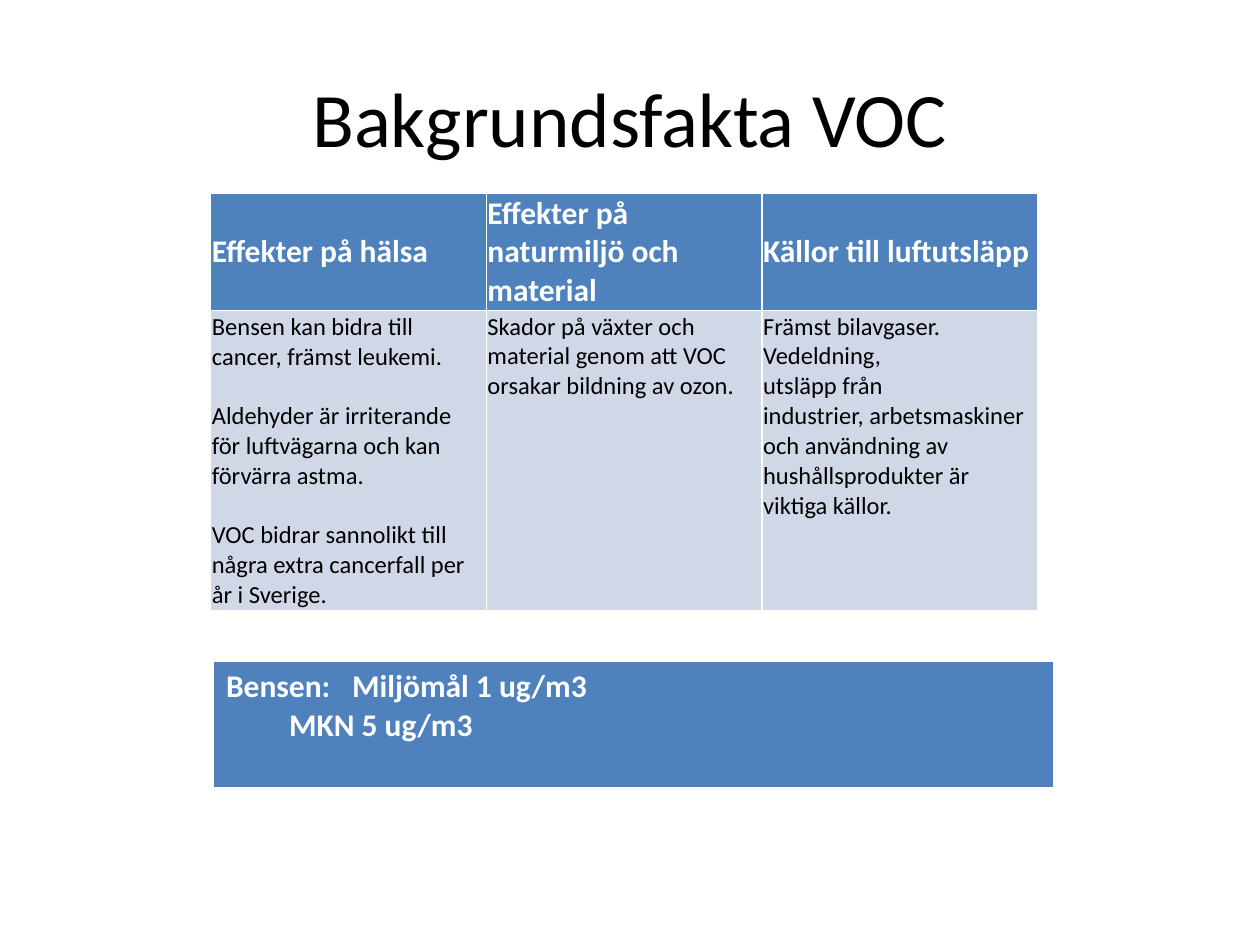
from pptx import Presentation
from pptx.dml.color import RGBColor
from pptx.enum.text import MSO_ANCHOR, PP_ALIGN
from pptx.util import Pt

BLUE = RGBColor(0x4F, 0x81, 0xBD)
PALE = RGBColor(0xD0, 0xD8, 0xE8)
WHITE = RGBColor(0xFF, 0xFF, 0xFF)
BLACK = RGBColor(0, 0, 0)


def style_runs(tf, size, color, bold=False):
    for p in tf.paragraphs:
        for r in p.runs:
            r.font.name = "Calibri"
            r.font.size = Pt(size)
            r.font.bold = bold
            r.font.color.rgb = color


def fill_cell(cell, paragraphs, size, color, bold, fill, gap=0):
    cell.fill.solid()
    cell.fill.fore_color.rgb = fill
    tf = cell.text_frame
    for i, text in enumerate(paragraphs):
        p = tf.add_paragraph() if i else tf.paragraphs[0]
        p.text = text
        if i:
            p.space_before = Pt(gap)
    style_runs(tf, size, color, bold)


prs = Presentation()
prs.slide_width, prs.slide_height = Pt(720), Pt(540)
s = prs.slides.add_slide(prs.slide_layouts[5])

# Title
title = s.shapes.title
title.left, title.top, title.width, title.height = Pt(36), Pt(21.6), Pt(648), Pt(90)
tf = title.text_frame
tf.text = "Bakgrundsfakta VOC"
tf.vertical_anchor = MSO_ANCHOR.MIDDLE
tf.paragraphs[0].alignment = PP_ALIGN.CENTER
style_runs(tf, 44, BLACK)

# Effects and sources: header and body of each column
columns = [
    ("Effekter på hälsa",
     ["Bensen kan bidra till cancer, främst leukemi.",
      "Aldehyder är irriterande för luftvägarna och kan förvärra astma.",
      "VOC bidrar sannolikt till några extra cancerfall per år i Sverige."]),
    ("Effekter på naturmiljö och material",
     ["Skador på växter och material genom att VOC orsakar bildning av ozon."]),
    ("Källor till luftutsläpp",
     ["Främst bilavgaser. Vedeldning,\nutsläpp från\nindustrier, arbetsmaskiner\n"
      "och användning av\nhushållsprodukter är\nviktiga källor."]),
]
effects = s.shapes.add_table(2, 3, Pt(120.4), Pt(110.2), Pt(472.5), Pt(238.2)).table
effects.rows[0].height, effects.rows[1].height = Pt(67.2), Pt(171)
for col, (header, body) in enumerate(columns):
    head_cell, body_cell = effects.cell(0, col), effects.cell(1, col)
    fill_cell(head_cell, [header], 18, WHITE, True, BLUE)
    fill_cell(body_cell, body, 14, BLACK, False, PALE, gap=17)
    head_cell.vertical_anchor = MSO_ANCHOR.MIDDLE
    body_cell.vertical_anchor = MSO_ANCHOR.MIDDLE if col == 0 else MSO_ANCHOR.TOP
    for cell in (head_cell, body_cell):
        cell.margin_left = cell.margin_right = Pt(0.7)
        cell.margin_top = cell.margin_bottom = Pt(0.7)

# Benzene limits
limits = s.shapes.add_table(1, 1, Pt(122), Pt(378), Pt(480), Pt(72)).table
fill_cell(limits.cell(0, 0), ["Bensen: \tMiljömål 1 ug/m3", "\tMKN 5 ug/m3"],
          18, WHITE, True, BLUE)

prs.save("out.pptx")
